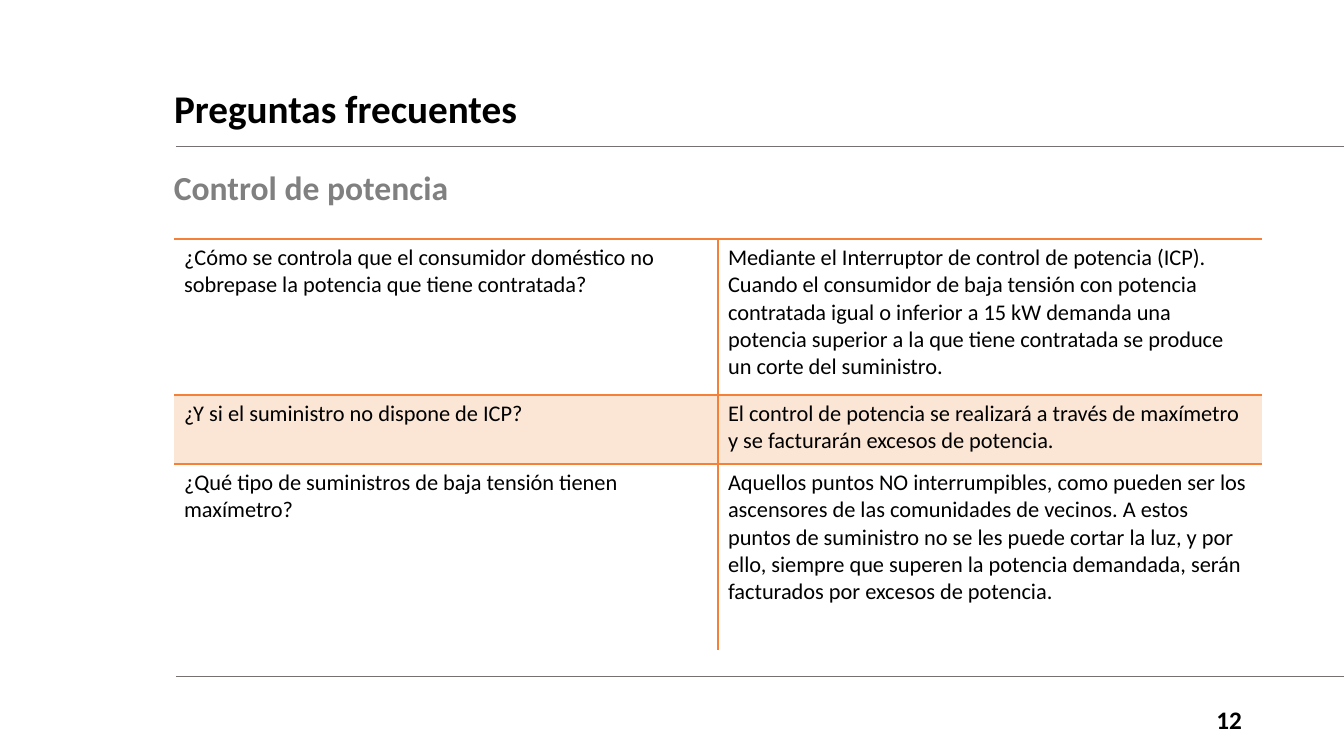
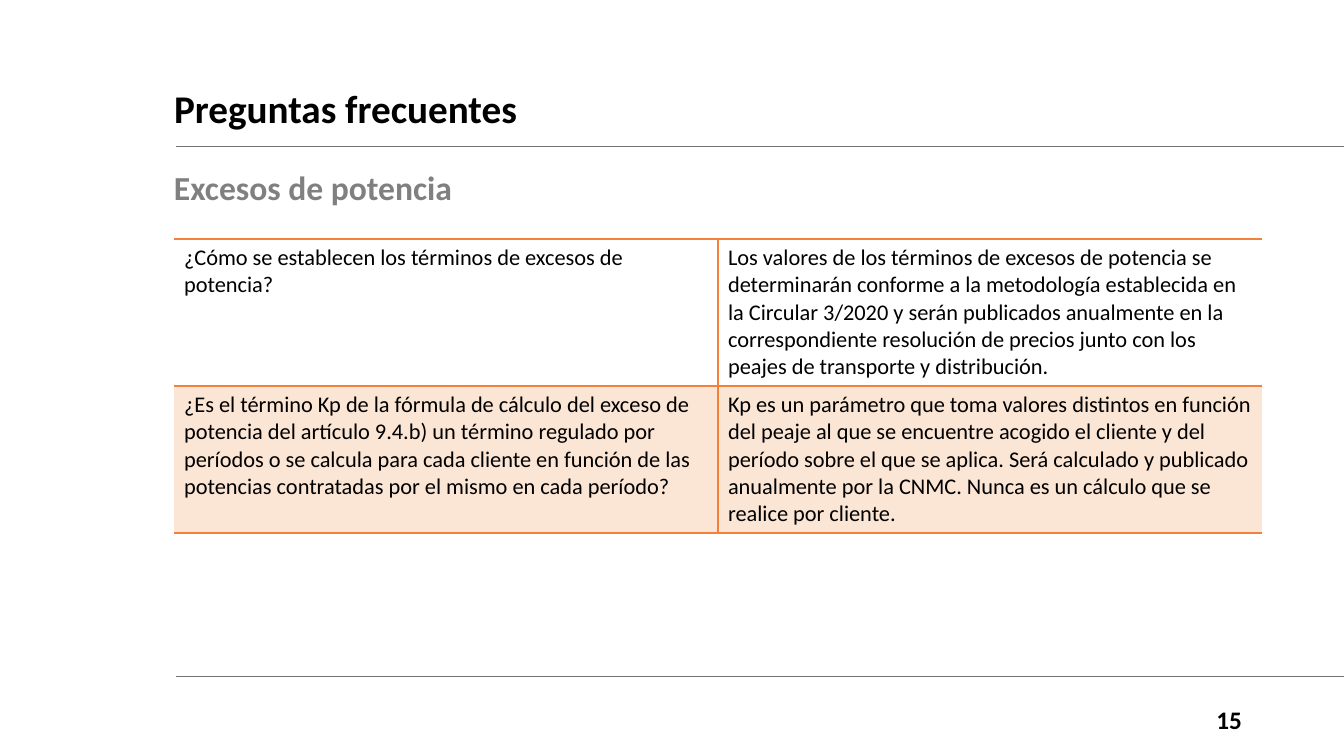
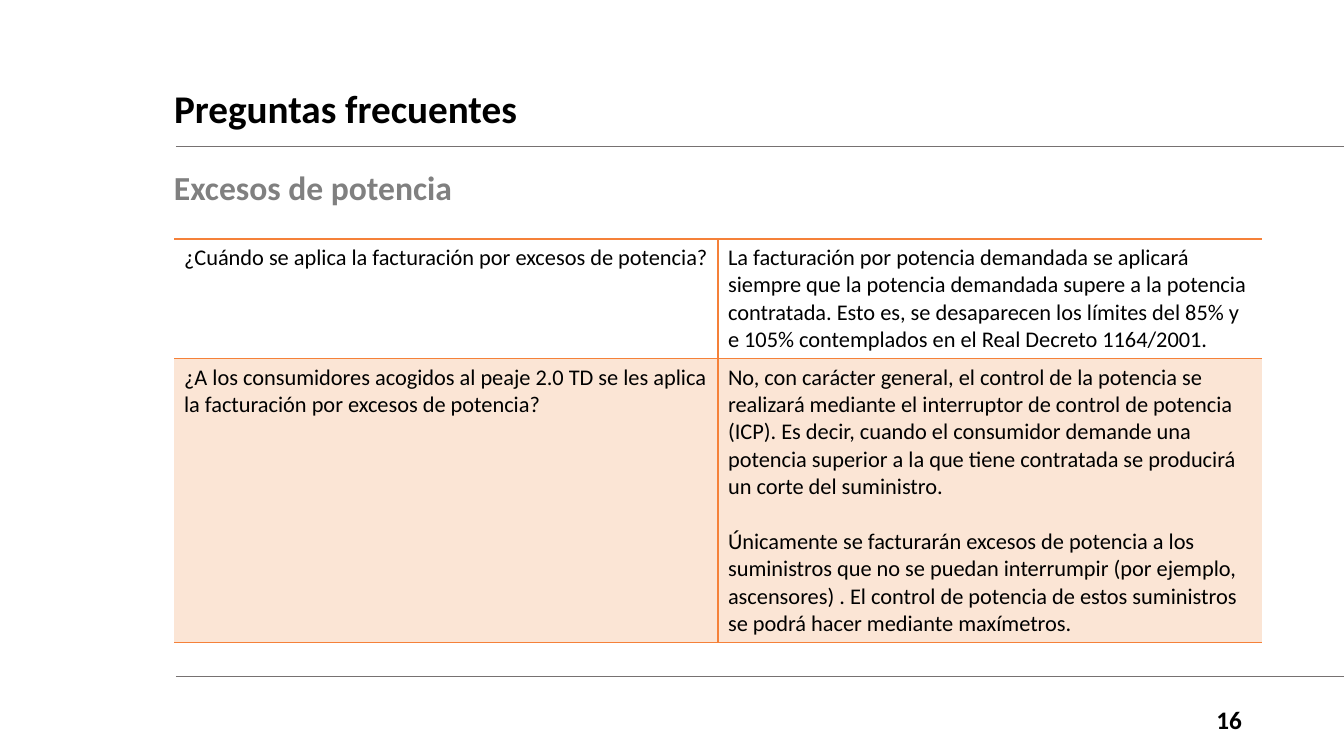
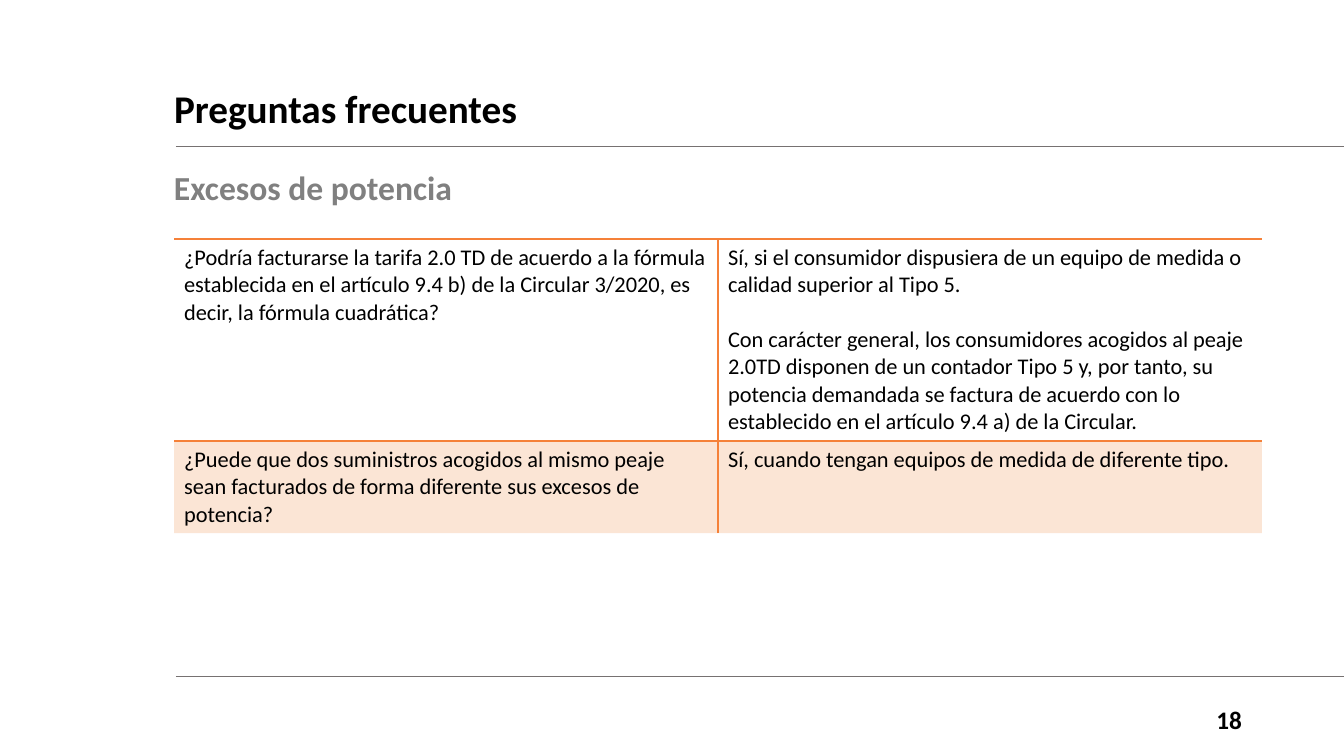
from lxml.etree import SubElement
from pptx import Presentation
from pptx.dml.color import RGBColor
from pptx.enum.shapes import MSO_CONNECTOR
from pptx.enum.text import MSO_ANCHOR, MSO_AUTO_SIZE, PP_ALIGN
from pptx.oxml.ns import qn
from pptx.util import Emu, Pt

WIDTH, HEIGHT = 1344, 756
EMU_PER_PX = 12192000 / WIDTH
FONT = "Calibri"
COLORS = {
    "text": "000000",
    "subtitle": "808080",
    "rule": "767171",
    "border": "F58139",
    "band": "ED7D31",
}
BAND_ALPHA = 20000
NO_STYLE_ID = "{2D5ABB26-0587-4C30-8999-92F81FD0307C}"

# Boxes as left, top, width, height
TITLE_BOX = (164, 69, 1088, 84)
SUBTITLE_BOX = (164, 167, 1088, 55)
NUMBER_BOX = (1180, 699, 72, 40)
TABLE_BOX = (174, 239, 1088)
RULE_LEFT = 176
RULE_TOPS = (146, 676)

# Each row: height, question, paragraphs of the answer
PAGES = [
    {
        "number": "12", "subtitle": "Control de potencia", "closed": False,
        "rows": [
            (156, "¿Cómo se controla que el consumidor doméstico no sobrepase la potencia que tiene contratada?",
             ["Mediante el Interruptor de control de potencia (ICP). Cuando el consumidor de baja tensión con "
              "potencia contratada igual o inferior a 15 kW demanda una potencia superior a la que tiene "
              "contratada se produce un corte del suministro."]),
            (69, "¿Y si el suministro no dispone de ICP?",
             ["El control de potencia se realizará a través de maxímetro y se facturarán excesos de potencia."]),
            (186, "¿Qué tipo de suministros de baja tensión tienen maxímetro?",
             ["Aquellos puntos NO interrumpibles, como pueden ser los ascensores de las comunidades de vecinos. "
              "A estos puntos de suministro no se les puede cortar la luz, y por ello, siempre que superen la "
              "potencia demandada, serán facturados por excesos de potencia."]),
        ],
    },
    {
        "number": "15", "subtitle": "Excesos de potencia", "closed": True,
        "rows": [
            (147, "¿Cómo se establecen los términos de excesos de potencia?",
             ["Los valores de los términos de excesos de potencia se determinarán conforme a la metodología "
              "establecida en la Circular 3/2020 y serán publicados anualmente en la correspondiente resolución "
              "de precios junto con los peajes de transporte y distribución."]),
            (147, "¿Es el término Kp de la fórmula de cálculo del exceso de potencia del artículo 9.4.b) un término "
             "regulado por períodos o se calcula para cada cliente en función de las potencias contratadas por "
             "el mismo en cada período?",
             ["Kp es un parámetro que toma valores distintos en función del peaje al que se encuentre acogido el "
              "cliente y del período sobre el que se aplica. Será calculado y publicado anualmente por la CNMC. "
              "Nunca es un cálculo que se realice por cliente."]),
        ],
    },
    {
        "number": "16", "subtitle": "Excesos de potencia", "closed": True,
        "rows": [
            (119, "¿Cuándo se aplica la facturación por excesos de potencia?",
             ["La facturación por potencia demandada se aplicará siempre que la potencia demandada supere a la "
              "potencia contratada. Esto es, se desaparecen los límites del 85% y e 105% contemplados en el "
              "Real Decreto 1164/2001."]),
            (284, "¿A los consumidores acogidos al peaje 2.0 TD se les aplica la facturación por excesos de potencia?",
             ["No, con carácter general, el control de la potencia se realizará mediante el interruptor de "
              "control de potencia (ICP). Es decir, cuando el consumidor demande una potencia superior a la que "
              "tiene contratada se producirá un corte del suministro.",
              "Únicamente se facturarán excesos de potencia a los suministros que no se puedan interrumpir (por "
              "ejemplo, ascensores) . El control de potencia de estos suministros se podrá hacer mediante "
              "maxímetros."]),
        ],
    },
    {
        "number": "18", "subtitle": "Excesos de potencia", "closed": False,
        "rows": [
            (202, "¿Podría facturarse la tarifa 2.0 TD de acuerdo a la fórmula establecida en el artículo 9.4 b) de "
             "la Circular 3/2020, es decir, la fórmula cuadrática?",
             ["Sí, si el consumidor dispusiera de un equipo de medida o calidad superior al Tipo 5.",
              "Con carácter general, los consumidores acogidos al peaje 2.0TD disponen de un contador Tipo 5 y, "
              "por tanto, su potencia demandada se factura de acuerdo con lo establecido en el artículo 9.4 a) "
              "de la Circular."]),
            (92, "¿Puede que dos suministros acogidos al mismo peaje sean facturados de forma diferente sus excesos "
             "de potencia?",
             ["Sí, cuando tengan equipos de medida de diferente tipo."]),
        ],
    },
]


def px(length):
    return Emu(round(length * EMU_PER_PX))


def rgb(name):
    return RGBColor.from_string(COLORS[name])


def set_font(paragraph, size, color="text", bold=False):
    font = paragraph.font
    font.name, font.size, font.bold = FONT, Pt(size), bold
    font.color.rgb = rgb(color)


def write_line(frame, text, size, color="text", align=PP_ALIGN.LEFT, anchor=MSO_ANCHOR.MIDDLE):
    """Fill a text frame with one bold line."""
    frame.word_wrap = True
    frame.auto_size = MSO_AUTO_SIZE.NONE
    frame.vertical_anchor = anchor
    frame.text = text
    paragraph = frame.paragraphs[0]
    paragraph.alignment = align
    set_font(paragraph, size, color, bold=True)
    return paragraph


def add_frame(slide, number):
    """Rules and page number common to all slides."""
    for top in RULE_TOPS:
        rule = slide.shapes.add_connector(
            MSO_CONNECTOR.STRAIGHT, px(RULE_LEFT), px(top), px(WIDTH), px(top))
        rule.line.color.rgb = rgb("rule")
        rule.line.width = Pt(0.5)
        SubElement(rule._element.spPr, qn("a:effectLst"))
    page_number = slide.shapes.add_textbox(*map(px, NUMBER_BOX))
    write_line(page_number.text_frame, number, 18, align=PP_ALIGN.RIGHT)


def add_headings(slide, subtitle):
    title = slide.shapes.title
    title.left, title.top, title.width, title.height = map(px, TITLE_BOX)
    write_line(title.text_frame, "Preguntas frecuentes", 28).line_spacing = 0.9
    subheading = slide.shapes.add_textbox(*map(px, SUBTITLE_BOX))
    write_line(subheading.text_frame, subtitle, 24, "subtitle", anchor=MSO_ANCHOR.TOP).line_spacing = 0.9


def set_borders(cell, sides):
    """Draw the given sides, in the order L, R, T, B."""
    properties = cell._tc.get_or_add_tcPr()
    for side in sides:
        border = SubElement(properties, qn(f"a:ln{side}"), w=str(Pt(1)))
        fill = SubElement(border, qn("a:solidFill"))
        SubElement(fill, qn("a:srgbClr"), val=COLORS["border"])


def fill_cell(cell, paragraphs, banded):
    cell.text = "\n".join(paragraphs)
    for index, paragraph in enumerate(cell.text_frame.paragraphs):
        if index:
            paragraph.space_before = Pt(19.5)
        set_font(paragraph, 16)
    if banded:
        cell.fill.solid()
        cell.fill.fore_color.rgb = rgb("band")
        color = cell._tc.tcPr.find(qn("a:solidFill")).find(qn("a:srgbClr"))
        SubElement(color, qn("a:alpha"), val=str(BAND_ALPHA))
    else:
        cell.fill.background()


def add_questions(slide, box, rows, closed):
    """Table of questions and answers; closed adds a line below it."""
    left, top, width = box
    height = sum(row[0] for row in rows)
    table = slide.shapes.add_table(
        len(rows), 2, px(left), px(top), px(width), px(height)).table
    table.first_row = table.horz_banding = False
    table._tbl.tblPr.find(qn("a:tableStyleId")).text = NO_STYLE_ID
    for column in table.columns:
        column.width = px(width / 2)
    for index, (row_height, question, answer) in enumerate(rows):
        table.rows[index].height = px(row_height)
        bottom = "B" if closed or index < len(rows) - 1 else ""
        for column, (inner_side, paragraphs) in enumerate((("R", [question]), ("L", answer))):
            cell = table.cell(index, column)
            set_borders(cell, inner_side + "T" + bottom)
            fill_cell(cell, paragraphs, banded=index % 2 == 1)


def main():
    presentation = Presentation()
    presentation.slide_width, presentation.slide_height = px(WIDTH), px(HEIGHT)
    title_only = presentation.slide_layouts[5]
    for page in PAGES:
        slide = presentation.slides.add_slide(title_only)
        add_frame(slide, page["number"])
        add_headings(slide, page["subtitle"])
        add_questions(slide, TABLE_BOX, page["rows"], page["closed"])
    presentation.save("out.pptx")


if __name__ == "__main__":
    main()
